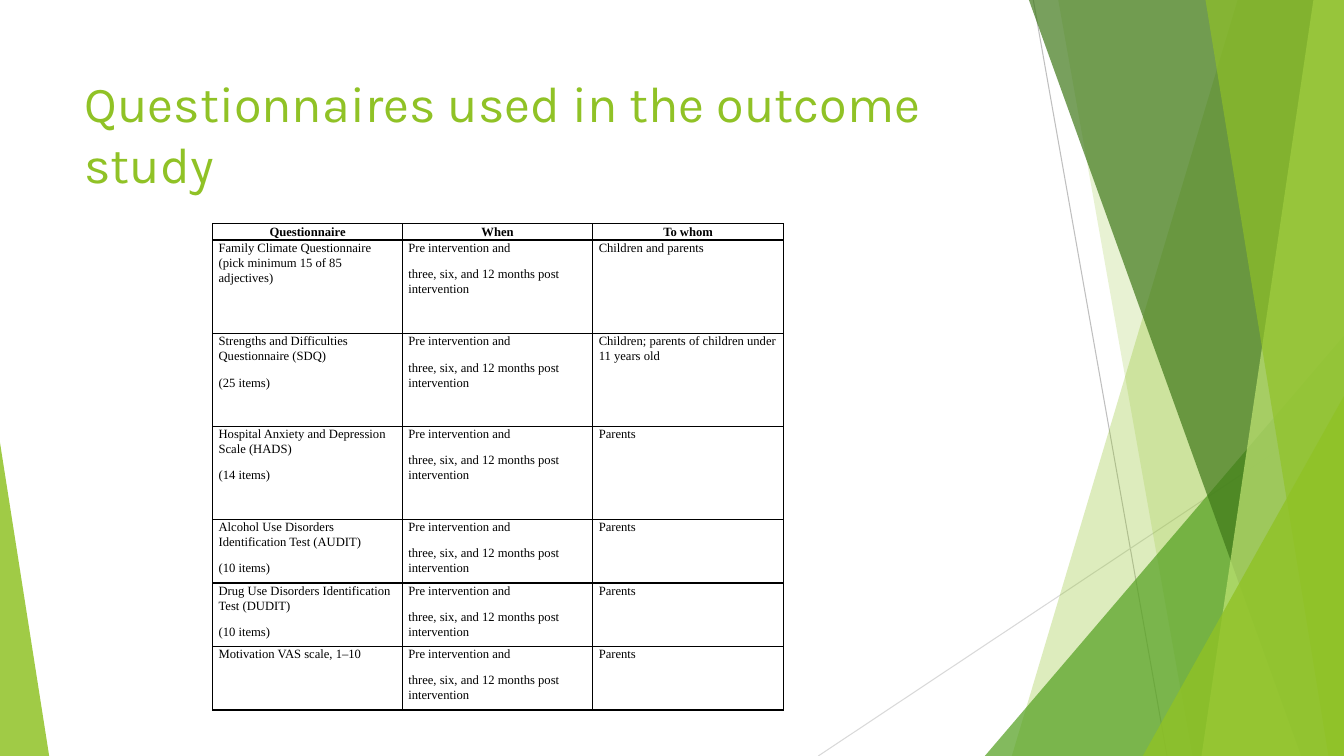
from dataclasses import dataclass

from lxml import etree
from pptx import Presentation
from pptx import util as u
from pptx.dml.color import RGBColor
from pptx.enum import shapes, text
from pptx.oxml import ns


@dataclass(frozen=True)
class Theme:
    lime: str = "90C226"
    pale_lime: str = "C0E474"
    green: str = "54A021"
    forest: str = "3F7819"
    ink: str = "000000"
    title_font: str = "Karla"
    table_font: str = "Times New Roman"
    title_size: float = 36
    table_size: float = 9
    border: float = 1


@dataclass(frozen=True)
class Ray:
    """Thin line, in centimetres."""
    start: tuple[float, float]
    end: tuple[float, float]
    color: str


@dataclass(frozen=True)
class Band:
    """Full-height band reaching the right edge, in centimetres."""
    top_left: float
    bottom_left: float
    color: str
    opacity: int


@dataclass(frozen=True)
class Wedge:
    """Right triangle standing on the bottom edge, in centimetres."""
    left: float
    top: float
    width: float
    apex: float
    color: str
    opacity: int


@dataclass(frozen=True)
class Questionnaire:
    name: tuple[str, ...]
    to_whom: str
    height: float


THEME = Theme()
WIDTH, HEIGHT = 33.87, 19.05
HEADINGS = ("Questionnaire", "When", "To whom")
HEADING_HEIGHT = 0.41
COLUMN_WIDTHS = (4.78, 4.8, 4.8)
WHEN = ("Pre intervention and", "three, six, and 12 months post intervention")

RAYS = (
    Ray((26.04, 0), (29.41, HEIGHT), "BFBFBF"),
    Ray((WIDTH, 10.24), (20.62, HEIGHT), "D9D9D9"),
)
# Back to front
FACETS = (
    Band(31.19, 25.5, THEME.lime, 30),
    Band(26.67, 30.05, THEME.lime, 20),
    Wedge(24.82, 8.46, 9.05, 1, THEME.green, 72),
    Band(25.93, 32.79, THEME.forest, 70),
    Band(33.1, 30.28, THEME.pale_lime, 70),
    Band(30.38, 33.48, THEME.lime, 65),
    Wedge(28.8, 9.98, 5.07, 1, THEME.lime, 80),
    Wedge(0, 11.15, 1.24, 0, THEME.lime, 85),
)
QUESTIONNAIRES = (
    Questionnaire(("Family Climate Questionnaire (pick minimum 15 of 85 adjectives)",),
                  "Children and parents", 2.36),
    Questionnaire(("Strengths and Difficulties Questionnaire (SDQ)", "(25 items)"),
                  "Children; parents of children under 11 years old", 2.34),
    Questionnaire(("Hospital Anxiety and Depression Scale (HADS)", "(14 items)"),
                  "Parents", 2.34),
    Questionnaire(("Alcohol Use Disorders Identification Test (AUDIT)", "(10 items)"),
                  "Parents", 1.6),
    Questionnaire(("Drug Use Disorders Identification Test (DUDIT)", "(10 items)"),
                  "Parents", 1.6),
    Questionnaire(("Motivation VAS scale, 1–10",), "Parents", 1.6),
)


def add_run(paragraph, words: str, font: str, size: float, color: str,
            bold: bool = False) -> None:
    run = paragraph.add_run()
    run.text = words
    run.font.name = font
    run.font.size = u.Pt(size)
    run.font.bold = bold
    run.font.color.rgb = RGBColor.from_string(color)


def draw_ray(slide, ray: Ray) -> None:
    line = slide.shapes.add_connector(
        shapes.MSO_CONNECTOR.STRAIGHT,
        *(u.Cm(value) for value in ray.start + ray.end))
    line.line.color.rgb = RGBColor.from_string(ray.color)
    line.line.width = u.Pt(0.75)
    etree.SubElement(line._element.spPr, ns.qn("a:effectLst"))


def draw_facet(slide, facet: Band | Wedge) -> None:
    if isinstance(facet, Band):
        outline = slide.shapes.build_freeform(
            u.Cm(facet.top_left), 0, scale=1.0)
        outline.add_line_segments(
            [(u.Cm(WIDTH), 0), (u.Cm(WIDTH), u.Cm(HEIGHT)),
             (u.Cm(facet.bottom_left), u.Cm(HEIGHT))], close=True)
        pane = outline.convert_to_shape()
    else:
        pane = slide.shapes.add_shape(
            shapes.MSO_SHAPE.ISOSCELES_TRIANGLE, u.Cm(facet.left), u.Cm(facet.top),
            u.Cm(facet.width), u.Cm(HEIGHT - facet.top))
        pane.adjustments[0] = facet.apex
    pane.shadow.inherit = False
    pane.line.fill.background()
    pane.fill.solid()
    pane.fill.fore_color.rgb = RGBColor.from_string(facet.color)
    color = pane._element.spPr.find(".//" + ns.qn("a:srgbClr"))
    etree.SubElement(color, ns.qn("a:alpha"), val=str(facet.opacity * 1000))


def draw_title(slide, words: str) -> None:
    title = slide.shapes.add_textbox(u.Cm(1.88), u.Cm(1.7), u.Cm(23.88), u.Cm(3.66))
    frame = title.text_frame
    frame.word_wrap = True
    frame.vertical_anchor = text.MSO_ANCHOR.TOP
    add_run(frame.paragraphs[0], words, THEME.title_font, THEME.title_size, THEME.lime)


def add_borders(cell) -> None:
    properties = cell._tc.get_or_add_tcPr()
    for side in ("a:lnL", "a:lnR", "a:lnT", "a:lnB"):
        edge = etree.SubElement(properties, ns.qn(side), w=str(u.Pt(THEME.border)))
        fill = etree.SubElement(edge, ns.qn("a:solidFill"))
        etree.SubElement(fill, ns.qn("a:srgbClr"), val=THEME.ink)


def fill_cell(cell, lines: tuple[str, ...], heading: bool) -> None:
    add_borders(cell)
    cell.fill.background()
    cell.margin_left = cell.margin_right = u.Cm(0.15)
    cell.margin_top = cell.margin_bottom = 0
    frame = cell.text_frame
    for index, words in enumerate(lines):
        paragraph = frame.add_paragraph() if index else frame.paragraphs[0]
        paragraph.alignment = text.PP_ALIGN.CENTER if heading else text.PP_ALIGN.LEFT
        paragraph.line_spacing = 1.07
        paragraph.space_after = u.Pt(8)
        add_run(paragraph, words, THEME.table_font, THEME.table_size, THEME.ink, heading)


def draw_questionnaires(slide) -> None:
    rows = [tuple((heading,) for heading in HEADINGS)]
    rows += [(item.name, WHEN, (item.to_whom,)) for item in QUESTIONNAIRES]
    heights = [HEADING_HEIGHT] + [item.height for item in QUESTIONNAIRES]
    table = slide.shapes.add_table(
        len(rows), len(HEADINGS), u.Cm(5.36), u.Cm(5.64),
        u.Cm(sum(COLUMN_WIDTHS)), u.Cm(sum(heights))).table
    table.first_row = table.horz_banding = False
    for column, width in zip(table.columns, COLUMN_WIDTHS):
        column.width = u.Cm(width)
    for row_index, (row, height) in enumerate(zip(rows, heights)):
        table.rows[row_index].height = u.Cm(height)
        for column_index, lines in enumerate(row):
            fill_cell(table.cell(row_index, column_index), lines, row_index == 0)


def main() -> None:
    deck = Presentation()
    deck.slide_width, deck.slide_height = u.Cm(WIDTH), u.Cm(HEIGHT)
    slide = deck.slides.add_slide(deck.slide_layouts[6])

    # Faceted backdrop
    for ray in RAYS:
        draw_ray(slide, ray)
    for facet in FACETS:
        draw_facet(slide, facet)

    # Content
    draw_title(slide, "Questionnaires used in the outcome study")
    draw_questionnaires(slide)
    deck.save("out.pptx")


if __name__ == "__main__":
    main()
